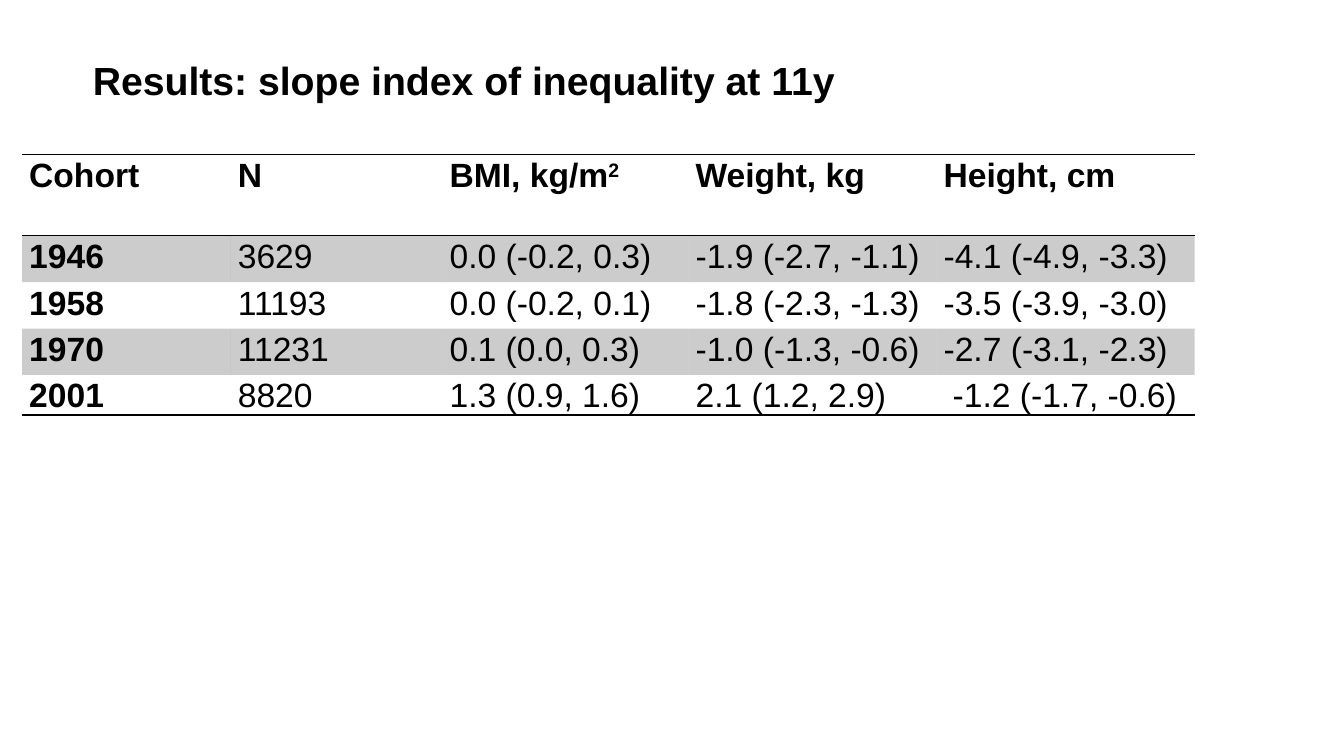
from lxml import etree
from pptx import Presentation
from pptx.dml.color import RGBColor
from pptx.enum.text import MSO_ANCHOR, PP_ALIGN
from pptx.oxml.ns import qn
from pptx.util import Inches, Pt

LEFT, JUSTIFY = PP_ALIGN.LEFT, PP_ALIGN.JUSTIFY
MIDDLE = MSO_ANCHOR.MIDDLE
COLORS = {"ink": "000000"}
INK = RGBColor.from_string(COLORS["ink"])
NO_STYLE_NO_GRID = "{2D5ABB26-0587-4C30-8999-92F81FD0307C}"

HEADINGS = ["Cohort", "N", "BMI, kg/m", "Weight, kg", "Height, cm"]
COHORTS = [
    ["1946", "3629", "0.0 (-0.2, 0.3)", "-1.9 (-2.7, -1.1)", "-4.1 (-4.9, -3.3)"],
    ["1958", "11193", "0.0 (-0.2, 0.1)", "-1.8 (-2.3, -1.3)", "-3.5 (-3.9, -3.0)"],
    ["1970", "11231", "0.1 (0.0, 0.3)", "-1.0 (-1.3, -0.6)", "-2.7 (-3.1, -2.3)"],
    ["2001", "8820", "1.3 (0.9, 1.6)", "2.1 (1.2, 2.9)", "-1.2 (-1.7, -0.6)"],
]
COLUMN_WIDTHS = [2.07, 2.1, 2.44, 2.46, 2.56]
ROW_HEIGHTS = [0.81, 0.46, 0.46, 0.46, 0.36]


def style_font(font, size, bold):
    font.name = "Arial"
    font.size = Pt(size)
    font.bold = bold
    font.color.rgb = INK


def add_rule(cell, tag):
    rule = etree.SubElement(cell._tc.get_or_add_tcPr(), qn(tag), w=str(Pt(1)))
    fill = etree.SubElement(rule, qn("a:solidFill"))
    etree.SubElement(fill, qn("a:srgbClr"), val=COLORS["ink"])


prs = Presentation()
prs.slide_width, prs.slide_height = Inches(13.33), Inches(7.5)
slide = prs.slides.add_slide(prs.slide_layouts[5])

# Title
title = slide.shapes.title
title.left, title.top = Inches(0.92), Inches(0.54)
title.width, title.height = Inches(11.5), Inches(0.57)
heading = title.text_frame
heading.text = "Results: slope index of inequality at 11y"
heading.word_wrap = True
heading.vertical_anchor = MIDDLE
heading.margin_left = heading.margin_right = 0
heading.margin_top = heading.margin_bottom = 0
heading.paragraphs[0].alignment = LEFT
heading.paragraphs[0].line_spacing = 0.9
style_font(heading.paragraphs[0].runs[0].font, 28, True)

# Table grid
rows = [HEADINGS] + COHORTS
last_row = len(rows) - 1
results = slide.shapes.add_table(
    len(rows), len(HEADINGS), Inches(0.22), Inches(1.53),
    Inches(sum(COLUMN_WIDTHS)), Inches(sum(ROW_HEIGHTS))).table
results.first_row = results.horz_banding = False
results._tbl.tblPr.find(qn("a:tableStyleId")).text = NO_STYLE_NO_GRID
for column, width in zip(results.columns, COLUMN_WIDTHS):
    column.width = Inches(width)
for row, height in zip(results.rows, ROW_HEIGHTS):
    row.height = Inches(height)

# Cells: ruled header and last row, every other cohort shaded
for r, values in enumerate(rows):
    for c, value in enumerate(values):
        cell = results.cell(r, c)
        cell.margin_left = cell.margin_right = Inches(0.07)
        cell.margin_top = cell.margin_bottom = 0
        paragraph = cell.text_frame.paragraphs[0]
        paragraph.text = value
        paragraph.alignment = JUSTIFY
        paragraph.line_spacing = 1.07
        style_font(paragraph.runs[0].font, 24, r == 0 or c == 0)
        if r == 0:
            add_rule(cell, "a:lnT")
        if r in (0, last_row):
            add_rule(cell, "a:lnB")
        if r % 2:
            cell.fill.solid()
            cell.fill.fore_color.rgb = INK
            shade = cell._tc.tcPr.find(qn("a:solidFill")).find(qn("a:srgbClr"))
            etree.SubElement(shade, qn("a:alpha"), val="20000")
        else:
            cell.fill.background()

# Squared unit in the BMI heading
square = results.cell(0, 2).text_frame.paragraphs[0].add_run()
square.text = "2"
style_font(square.font, 24, True)
square._r.get_or_add_rPr().set("baseline", "30000")

# The last height estimate sits slightly further in
results.cell(last_row, 4).margin_left = Inches(0.16)

prs.save("out.pptx")
